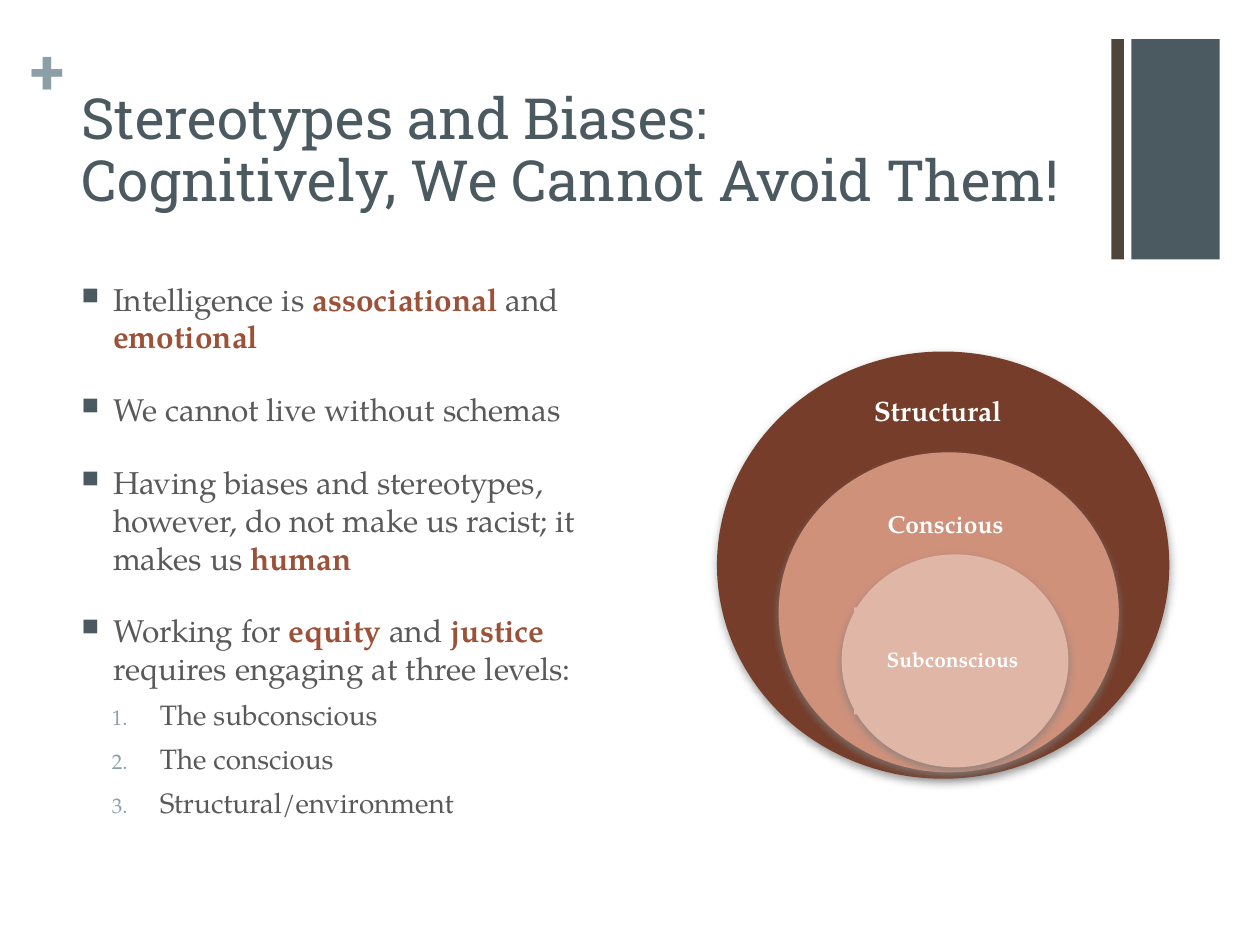
from lxml.etree import SubElement
from pptx import Presentation
from pptx.dml.color import RGBColor
from pptx.enum.shapes import MSO_SHAPE
from pptx.enum.text import MSO_ANCHOR, PP_ALIGN
from pptx.oxml.ns import qn
from pptx.util import Inches, Pt

SLATE, MIST, BROWN = "4B5A60", "8D9FA6", "504539"
GREY, RUST, WHITE = "595959", "9C5238", "FFFFFF"
HEAD, BODY = "Roboto Slab", "TeX Gyre Pagella"


def color(code):
    """Turn a hex string into a colour."""
    return RGBColor.from_string(code)


def add(parent, tag, **attrs):
    """Append a drawing element with the given attributes."""
    return SubElement(parent, qn(tag), {k: str(v) for k, v in attrs.items()})


class Deck:
    """Hold the style and the slide, on a grid of 100 columns by 75 rows."""

    def __init__(self):
        """Open a deck with one blank slide."""
        self.deck = Presentation()
        self.deck.slide_width, self.deck.slide_height = Inches(10), Inches(7.5)
        self.slide = self.deck.slides.add_slide(self.deck.slide_layouts[6])
        self.col = self.deck.slide_width / 100
        self.row = self.deck.slide_height / 75

    def place(self, box):
        """Turn columns and rows into lengths."""
        return [round(n * unit) for n, unit in zip(box, (self.col, self.row) * 2)]

    def font(self, par, size, name, code, bold=False):
        """Set the font of a paragraph."""
        par.font.size, par.font.name, par.font.bold = Pt(size), name, bold
        par.font.color.rgb = color(code)

    def shape(self, kind, box, fill):
        """Draw a plain filled shape."""
        item = self.slide.shapes.add_shape(kind, *self.place(box))
        item.shadow.inherit = False
        item.fill.solid()
        item.fill.fore_color.rgb = color(fill)
        item.line.fill.background()
        return item

    def frame(self, item, inset=None, anchor=MSO_ANCHOR.TOP):
        """Set up the text frame of a shape."""
        frame = item.text_frame
        frame.word_wrap, frame.vertical_anchor = True, anchor
        if inset is not None:
            frame.margin_left = frame.margin_right = Inches(inset)
            frame.margin_top = frame.margin_bottom = Inches(inset)
        return frame

    def text(self, box, words, size, code, bold=False, inset=None,
             anchor=MSO_ANCHOR.TOP, space=None):
        """Write one heading paragraph."""
        item = self.slide.shapes.add_textbox(*self.place(box))
        par = self.frame(item, inset, anchor).paragraphs[0]
        par.text, par.line_spacing = words, space
        self.font(par, size, HEAD, code, bold)

    def ring(self, oval, label, fill, words, size, inset):
        """Draw an oval with a soft shadow and its label."""
        item = self.shape(MSO_SHAPE.OVAL, oval, fill)
        glow = item.element.spPr.find(qn("a:effectLst"))
        cast = add(glow, "a:outerShdw", blurRad=Pt(5), dist=Pt(2),
                   dir=5400000, rotWithShape=0)
        add(add(cast, "a:srgbClr", val="808080"), "a:alpha", val=75000)
        plate = self.shape(MSO_SHAPE.RECTANGLE, label, fill)
        par = self.frame(plate, inset, MSO_ANCHOR.MIDDLE).paragraphs[0]
        par.text, par.alignment, par.line_spacing = words, PP_ALIGN.CENTER, 0.9
        self.font(par, size, BODY, WHITE, True)

    def bullet(self, par, code, left, hang, kind, **attrs):
        """Give a paragraph a hanging bullet or number."""
        props = par._p.get_or_add_pPr()
        props.set("marL", str(Inches(left)))
        props.set("indent", str(-Inches(hang)))
        add(add(props, "a:buClr"), "a:srgbClr", val=code)
        add(props, "a:buSzPct", val=75000)
        add(props, kind, **attrs)

    def points(self, box, items, steps):
        """Write bullets, with starred words accented, then numbered steps."""
        frame = self.frame(self.slide.shapes.add_textbox(*self.place(box)))
        for i, words in enumerate(items + steps):
            par = frame.add_paragraph() if i else frame.paragraphs[0]
            if i < len(items):
                self.bullet(par, SLATE, 0.25, 0.25, "a:buChar", char="■")
                size, gap = 18, 20
            else:
                par.level = 1
                self.bullet(par, MIST, 0.62, 0.38, "a:buAutoNum", type="arabicPeriod")
                size, gap = 16, 6
            par.space_before = Pt(gap if i else 0)
            self.font(par, size, BODY, GREY)
            for j, part in enumerate(words.split("*")):
                if part:
                    run = par.add_run()
                    run.text = part
                    if j % 2:
                        run.font.bold = True
                        run.font.color.rgb = color(RUST)

    def save(self):
        """Write the file."""
        self.deck.save("out.pptx")


def main():
    """Build the slide."""
    deck = Deck()
    for left, width, fill in ((89.8, 7, SLATE), (88.2, 1, BROWN)):
        deck.shape(MSO_SHAPE.RECTANGLE, (left, 3.1, width, 17.5), fill)
    deck.text((2.4, 2.5, 2.8, 6.1), "+", 36, MIST, bold=True, inset=0)
    deck.text((5.5, 5.3, 82.6, 12.2),
              "Stereotypes and Biases: \vCognitively, We Cannot Avoid Them!",
              32.4, SLATE, anchor=MSO_ANCHOR.BOTTOM, space=0.92)
    rings = (
        ((56.9, 27.9, 35.9, 33.9), (66.9, 30.2, 15.6, 5.1), "753D2A", "Structural ", 16, 0.1),
        ((61.8, 35.9, 27, 25.4), (66.3, 39.3, 18, 4.8), "D0917B", "Conscious ", 14, 0.1),
        ((66.8, 44, 18, 16.9), (67.8, 48.2, 15.6, 8.5), "E0B6A7", "Subconscious", 12, 0.08),
    )
    for ring in rings:
        deck.ring(*ring)
    deck.points(
        (5.5, 21.7, 47.4, 50.5),
        ["Intelligence is *associational* and *emotional*",
         "We cannot live without schemas",
         "Having biases and stereotypes, however, do not make us racist; "
         "it makes us *human*",
         "Working for *equity *and *justice *requires engaging at three levels:"],
        ["The subconscious", "The conscious", "Structural/environment"])
    deck.save()


if __name__ == "__main__":
    main()
